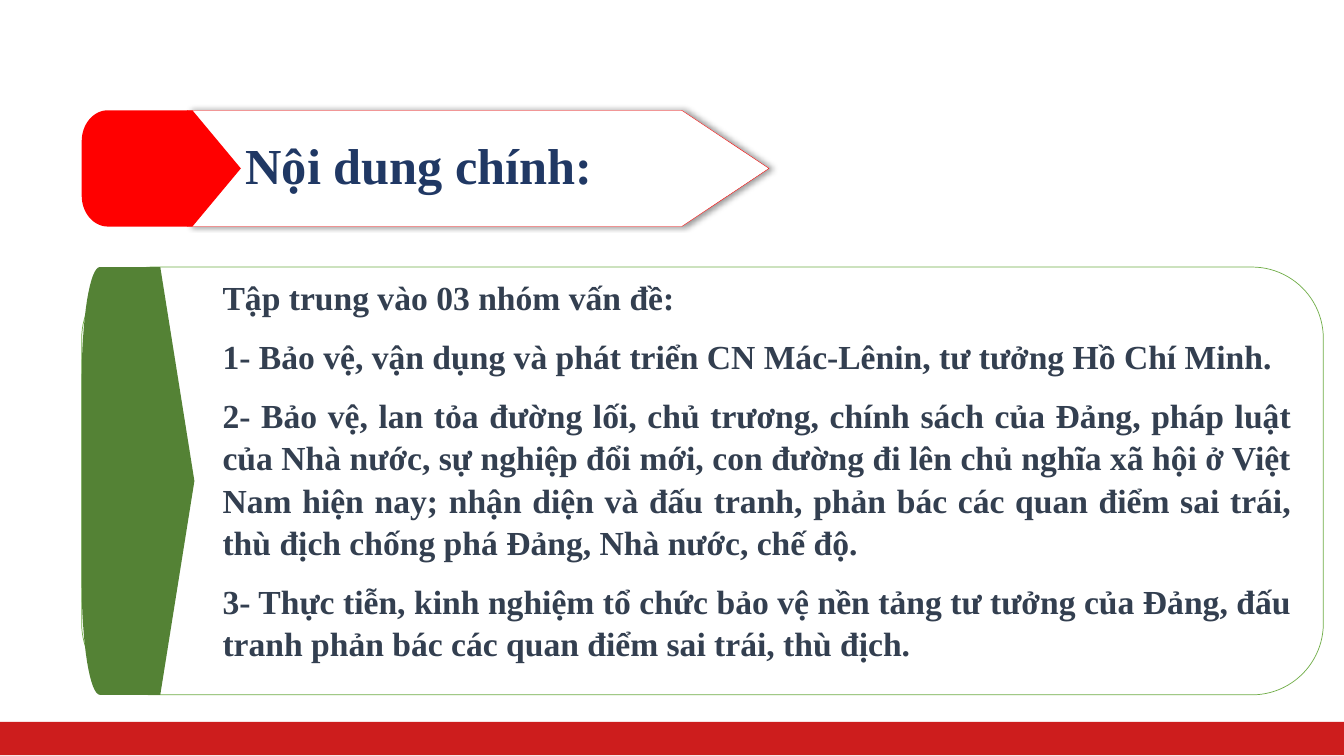
from dataclasses import dataclass
from math import cos, pi, sin

from lxml.etree import SubElement
from pptx import Presentation
from pptx.dml.color import RGBColor as RGB
from pptx.enum.shapes import MSO_SHAPE as Shape
from pptx.enum.text import MSO_ANCHOR as Anchor, PP_ALIGN as Align
from pptx.oxml.ns import qn
from pptx.util import Cm, Pt


@dataclass(frozen=True)
class Theme:
    """Colours, font and type sizes of the slide."""
    font: str = "Times New Roman"
    white: str = "FFFFFF"
    bar: str = "CD1D1D"
    red: str = "FF0000"
    green: str = "548235"
    edge: str = "70AD47"
    navy: str = "203864"
    slate: str = "333F50"
    head: int = 36
    body: int = 24


THEME = Theme()
TITLE = "Nội dung chính:"
ISSUES = [
    "Tập trung vào 03 nhóm vấn đề:",
    "1- Bảo vệ, vận dụng và phát triển CN Mác-Lênin, tư tưởng Hồ Chí Minh.",
    "2- Bảo vệ, lan tỏa đường lối, chủ trương, chính sách của Đảng, pháp luật "
    "của Nhà nước, sự nghiệp đổi mới, con đường đi lên chủ nghĩa xã hội ở Việt "
    "Nam hiện nay; nhận diện và đấu tranh, phản bác các quan điểm sai trái, "
    "thù địch chống phá Đảng, Nhà nước, chế độ.",
    "3- Thực tiễn, kinh nghiệm tổ chức bảo vệ nền tảng tư tưởng của Đảng, đấu "
    "tranh phản bác các quan điểm sai trái, thù địch.",
]


def paint(shape, fill, line=None, width=0.5):
    """Give a shape its fill and outline, without a shadow."""
    shape.shadow.inherit = False
    shape.fill.solid()
    shape.fill.fore_color.rgb = RGB.from_string(fill)
    if line:
        shape.line.color.rgb = RGB.from_string(line)
        shape.line.width = Pt(width)
    else:
        shape.line.fill.background()
    return shape


def add_box(slide, kind, left, top, width, height, fill, line=None):
    """Add a preset shape measured in centimetres."""
    box = slide.shapes.add_shape(kind, Cm(left), Cm(top), Cm(width), Cm(height))
    return paint(box, fill, line)


def add_form(slide, points, fill, line=None, width=0.5):
    """Add a closed outline through points in centimetres."""
    start, *rest = [(Cm(x), Cm(y)) for x, y in points]
    form = slide.shapes.build_freeform(*start)
    form.add_line_segments(rest, close=True)
    return paint(form.convert_to_shape(), fill, line, width)


def add_tab(slide, left, top, neck, tip, height, radii, fill):
    """Add a tab with round left corners and a pointed right side."""
    rx, ry = radii
    steps = 16
    turns = [pi / 2 * i / steps for i in range(steps + 1)]
    upper = [(left + rx * (1 - cos(t)), top + ry * (1 - sin(t))) for t in turns]
    base = 2 * top + height
    lower = [(x, base - y) for x, y in reversed(upper)]
    point = [(neck, top), (tip, top + height / 2), (neck, top + height)]
    add_form(slide, upper + point + lower, fill)


def add_arrow(slide, left, top, neck, tip, height):
    """Add the white title arrow with its soft shadow."""
    foot = top + height
    points = [(left, top), (neck, top), (tip, top + height / 2),
              (neck, foot), (left, foot)]
    arrow = add_form(slide, points, THEME.white, THEME.red, 0.25)
    effect = arrow.element.spPr.find(qn("a:effectLst"))
    shade = SubElement(effect, qn("a:outerShdw"), blurRad=str(Pt(4)),
                       dist=str(Pt(3)), dir="0", algn="l", rotWithShape="0")
    color = SubElement(shade, qn("a:srgbClr"), val="000000")
    SubElement(color, qn("a:alpha"), val="40000")


def add_text(slide, lines, left, top, width, height, *, size, color,
             anchor=Anchor.TOP, gap=0, pitch=1.0):
    """Add bold justified paragraphs in a wrapping box."""
    box = slide.shapes.add_textbox(Cm(left), Cm(top), Cm(width), Cm(height))
    frame = box.text_frame
    frame.word_wrap = True
    frame.vertical_anchor = anchor
    for i, line in enumerate(lines):
        para = frame.paragraphs[0] if i == 0 else frame.add_paragraph()
        para.alignment = Align.JUSTIFY
        para.line_spacing = pitch
        para.space_before = Pt(gap if i else 0)
        para.space_after = Pt(gap)
        run = para.add_run()
        run.text = line
        run.font.name = THEME.font
        run.font.size = Pt(size)
        run.font.bold = True
        run.font.color.rgb = RGB.from_string(color)


def main():
    """Build and save the slide."""
    deck = Presentation()
    deck.slide_width, deck.slide_height = Cm(33.87), Cm(19.05)
    slide = deck.slides.add_slide(deck.slide_layouts[6])
    add_box(slide, Shape.RECTANGLE, 0, 18.19, 33.87, 0.84, THEME.bar)
    add_box(slide, Shape.ROUNDED_RECTANGLE, 2.06, 6.73, 31.29, 10.78,
            THEME.white, THEME.edge)
    add_tab(slide, 2.06, 6.73, 4.04, 4.9, 10.78, (0.46, 2.86), THEME.green)
    add_text(slide, ISSUES, 5.36, 6.8, 27.43, 9.75, size=THEME.body,
             color=THEME.slate, gap=6, pitch=1.05)
    add_arrow(slide, 4.72, 2.78, 17.18, 19.38, 2.93)
    add_tab(slide, 2.06, 2.78, 4.85, 6.07, 2.93, (0.66, 0.78), THEME.red)
    add_text(slide, [TITLE], 5.94, 3.25, 12.93, 1.8, size=THEME.head,
             color=THEME.navy, anchor=Anchor.MIDDLE)
    deck.save("out.pptx")


if __name__ == "__main__":
    main()
